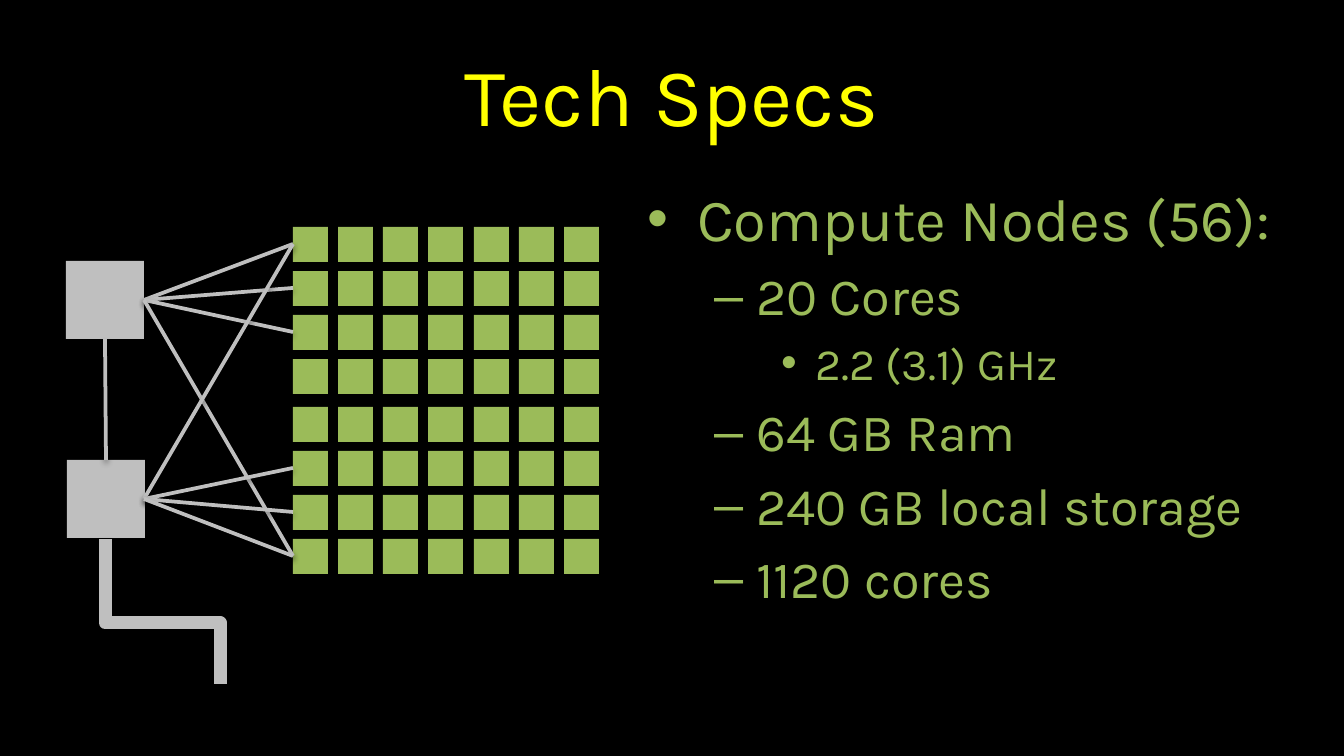
from pptx import Presentation
from pptx import util as u
from pptx.dml.color import RGBColor
from pptx.enum import shapes, text
from pptx.oxml import ns, parse_xml

PX = 914400 / 134.4
FONT = "Karla"
BLACK, YELLOW, GREEN, GREY = "000000", "FFFF00", "9BBB59", "BFBFBF"

# level: (font size in points, left margin, hanging indent, bullet)
LEVELS = {0: (32, 50, 50, "•"), 1: (28, 109, 42, "–"), 2: (24, 168, 34, "•")}
SPECS = [
    (0, "Compute Nodes (56):"),
    (1, "20 Cores"),
    (2, "2.2 (3.1) GHz"),
    (1, "64 GB Ram"),
    (1, "240 GB local storage"),
    (1, "1120 cores"),
]

COLUMNS, BANK_ROWS = 7, 4
NODE, SWITCH = 35, 78


def px(*lengths):
    return [u.Emu(round(length * PX)) for length in lengths]


def color(value):
    return RGBColor.from_string(value)


def element(xml):
    return parse_xml(xml.replace(" ", f" {ns.nsdecls('a')} ", 1))


def apply(target, formats):
    for name, value in formats.items():
        setattr(target, name, value)


def add_shadow(part, alpha, distance):
    part._element.spPr.append(element(
        f'<a:effectLst ><a:outerShdw blurRad="40000" dist="{distance}" dir="5400000" '
        f'rotWithShape="0"><a:srgbClr val="{BLACK}"><a:alpha val="{alpha}000"/>'
        '</a:srgbClr></a:outerShdw></a:effectLst>'))


def add_square(slide, left, top, side, fill):
    square = slide.shapes.add_shape(shapes.MSO_SHAPE.RECTANGLE, *px(left, top, side, side))
    square.fill.solid()
    square.fill.fore_color.rgb = color(fill)
    square.line.fill.background()
    add_shadow(square, 35, 23000)


def add_link(slide, start, end, width=2, kind=shapes.MSO_CONNECTOR.STRAIGHT):
    link = slide.shapes.add_connector(kind, *px(*start, *end))
    link.line.color.rgb = color(GREY)
    link.line.width = u.Pt(width)
    add_shadow(link, 38, 20000)
    return link


def add_text_frame(slide, box, anchor):
    frame = slide.shapes.add_textbox(*px(*box)).text_frame
    apply(frame, {"word_wrap": True, "vertical_anchor": anchor})
    return frame


def write(paragraph, words, size, ink):
    run = paragraph.add_run()
    run.text = words
    apply(run.font, {"name": FONT, "size": u.Pt(size)})
    run.font.color.rgb = color(ink)


def add_title(slide, box):
    heading = add_text_frame(slide, box, text.MSO_ANCHOR.MIDDLE).paragraphs[0]
    heading.alignment = text.PP_ALIGN.CENTER
    write(heading, "Tech Specs", 44, YELLOW)


def add_specs(slide, box):
    frame = add_text_frame(slide, box, text.MSO_ANCHOR.TOP)
    for index, (level, words) in enumerate(SPECS):
        spec_line = frame.add_paragraph() if index else frame.paragraphs[0]
        size, margin, hanging, bullet = LEVELS[level]
        spec_line.level = level
        properties = spec_line._p.get_or_add_pPr()
        margin, indent = px(margin, -hanging)
        properties.set("marL", str(margin))
        properties.set("indent", str(indent))
        for xml in ('<a:spcBef ><a:spcPct val="20000"/></a:spcBef>',
                    '<a:buFont typeface="Arial"/>',
                    f'<a:buChar char="{bullet}"/>'):
            properties.append(element(xml))
        write(spec_line, words, size, GREEN)


def add_cluster(slide, box):
    left, top, width, height = box
    grid_left = left + 227

    # Compute nodes: two banks of four rows
    row_tops = [top + bank * 180 + row * 44 for bank in range(2) for row in range(BANK_ROWS)]
    column_step = (left + width - NODE - grid_left) / (COLUMNS - 1)
    for row_top in row_tops:
        for column in range(COLUMNS):
            add_square(slide, round(grid_left + column * column_step), row_top, NODE, GREEN)

    # Switches, each linked to the rows it serves
    switches = [(left, top + 34, (0, 1, 2, 7)), (left + 1, top + 233, (0, 5, 6, 7))]
    for switch_left, switch_top, rows in switches:
        add_square(slide, switch_left, switch_top, SWITCH, GREY)
        port = (left + SWITCH, switch_top + SWITCH // 2)
        for row in rows:
            add_link(slide, port, (grid_left, row_tops[row] + NODE // 2))

    # Link between the switches
    add_link(slide, (left + 39, top + 112), (left + 40, top + 233))

    # Uplink: a bent line turned to leave and arrive vertically
    run, drop = 115, height - 312
    center_x, center_y = left + 39 + run / 2, top + 312 + drop / 2
    uplink = add_link(slide, (center_x - drop / 2, center_y - run / 2),
                      (center_x + drop / 2, center_y + run / 2),
                      7, shapes.MSO_CONNECTOR.ELBOW)
    properties = uplink._element.spPr
    for name, value in {"rot": "16200000", "flipH": "1"}.items():
        properties.xfrm.set(name, value)
    guides = properties.find(ns.qn("a:prstGeom")).get_or_add_avLst()
    guides.append(element('<a:gd name="adj1" fmla="val 57900"/>'))


def main():
    deck = Presentation()
    deck.slide_width, deck.slide_height = px(1344, 756)
    slide = deck.slides.add_slide(deck.slide_layouts[6])
    slide.background.fill.solid()
    slide.background.fill.fore_color.rgb = color(BLACK)

    add_title(slide, (67, 31, 1210, 126))
    add_specs(slide, (634, 175, 672, 536))
    add_cluster(slide, (66, 227, 533, 457))
    deck.save("out.pptx")


if __name__ == "__main__":
    main()
